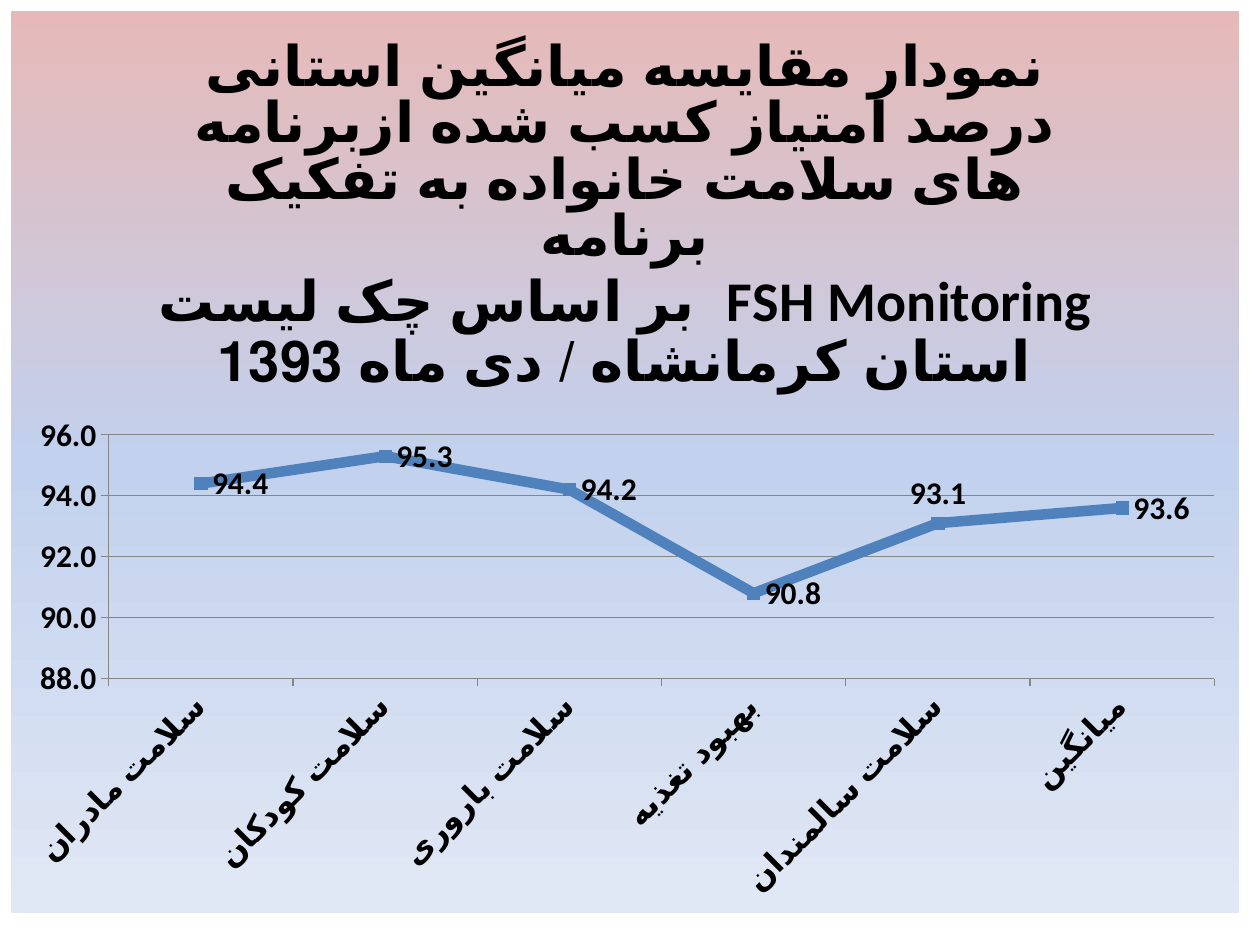
from lxml.etree import SubElement
from pptx import Presentation
from pptx.chart.data import CategoryChartData
from pptx.dml.color import RGBColor
from pptx.enum.chart import XL_CHART_TYPE, XL_LABEL_POSITION, XL_MARKER_STYLE, XL_TICK_MARK
from pptx.oxml import parse_xml
from pptx.oxml.ns import nsdecls, qn
from pptx.util import Pt

TITLE = [
    "نمودار مقایسه میانگین استانی درصد امتیاز کسب شده ازبرنامه های سلامت خانواده به تفکیک برنامه",
    "بر اساس چک لیست  FSH Monitoring",
    "استان کرمانشاه / دی ماه 1393",
]
SCORES = {
    "سلامت مادران": 94.4,
    "سلامت کودکان": 95.3,
    "سلامت باروری": 94.2,
    "بهبود تغذیه": 90.8,
    "سلامت سالمندان": 93.1,
    "میانگین": 93.6,
}
COLORS = {"text": "000000", "line": "4F81BD", "grid": "868686"}
STOPS = [(0, "E6B9B8"), (50, "C2D1ED"), (100, "E1E8F5")]
FORMAT = "0.0;[Red]0.0"
PLOT = {"x": 0.08, "y": 0.47, "w": 0.9, "h": 0.27}
RAISED = 4


def style(font, size):
    font.name, font.size, font.bold = "Calibri", Pt(size), True
    font.color.rgb = RGBColor.from_string(COLORS["text"])


def stroke(line, color, width):
    line.color.rgb = RGBColor.from_string(COLORS[color])
    line.width = Pt(width)


def add_title(chart):
    frame = chart.chart_title.text_frame
    frame.text = "\n".join(TITLE)
    for para in frame.paragraphs:
        for run in para.runs:
            style(run.font, 32)
    chart.chart_title.include_in_layout = False


def set_axes(chart):
    value, names = chart.value_axis, chart.category_axis
    for axis in (value, names):
        style(axis.tick_labels.font, 18)
        axis.major_tick_mark = XL_TICK_MARK.OUTSIDE
        stroke(axis.format.line, "grid", 0.75)
    value.minimum_scale, value.maximum_scale, value.major_unit = 88, 96, 2
    value.tick_labels.number_format = FORMAT
    value.tick_labels.number_format_is_linked = False
    stroke(value.major_gridlines.format.line, "grid", 0.75)
    names._element.find(qn("c:txPr")).find(qn("a:bodyPr")).set("rot", "-2700000")


def set_line(chart):
    plot = chart.plots[0]
    plot.vary_by_categories = False
    line = plot.series[0]
    line.smooth = False
    stroke(line.format.line, "line", 6)
    line.marker.style, line.marker.size = XL_MARKER_STYLE.SQUARE, 7
    line.marker.format.fill.solid()
    line.marker.format.fill.fore_color.rgb = RGBColor.from_string(COLORS["line"])
    stroke(line.marker.format.line, "line", 0.75)
    labels = line.data_labels
    labels.show_value = True
    labels.number_format, labels.number_format_is_linked = FORMAT, False
    labels.position = XL_LABEL_POSITION.RIGHT
    style(labels.font, 18)
    label = line.points[RAISED].data_label
    style(label.font, 18)
    label.position = XL_LABEL_POSITION.ABOVE


def set_area(chart):
    stops = "".join(
        f'<a:gs pos="{pos * 1000}"><a:srgbClr val="{color}"/></a:gs>' for pos, color in STOPS
    )
    fill = parse_xml(
        f'<c:spPr {nsdecls("c", "a")}><a:gradFill><a:gsLst>{stops}</a:gsLst>'
        '<a:lin ang="5400000" scaled="0"/></a:gradFill><a:ln><a:noFill/></a:ln></c:spPr>'
    )
    root = chart._chartSpace
    root.find(qn("c:chart")).addnext(fill)
    area = root.find(qn("c:chart")).find(qn("c:plotArea"))
    old = area.find(qn("c:layout"))
    if old is not None:
        area.remove(old)
    layout = parse_xml(f'<c:layout {nsdecls("c")}><c:manualLayout/></c:layout>')
    area.insert(0, layout)
    parts = {"layoutTarget": "inner", "xMode": "edge", "yMode": "edge", **PLOT}
    for tag, val in parts.items():
        SubElement(layout[0], qn(f"c:{tag}")).set("val", str(val))


def main():
    """Build the slide with the line chart of mean scores."""
    deck = Presentation()
    deck.slide_width, deck.slide_height = Pt(720), Pt(540)
    slide = deck.slides.add_slide(deck.slide_layouts[6])
    data = CategoryChartData(number_format=FORMAT)
    data.categories = list(SCORES)
    data.add_series("Series 1", list(SCORES.values()))
    box = (Pt(6), Pt(6), Pt(702), Pt(516))
    chart = slide.shapes.add_chart(XL_CHART_TYPE.LINE_MARKERS, *box, data).chart
    chart.has_legend = False
    chart.font.name, chart.font.size = "Calibri", Pt(10)
    add_title(chart)
    set_axes(chart)
    set_line(chart)
    set_area(chart)
    deck.save("out.pptx")


if __name__ == "__main__":
    main()
